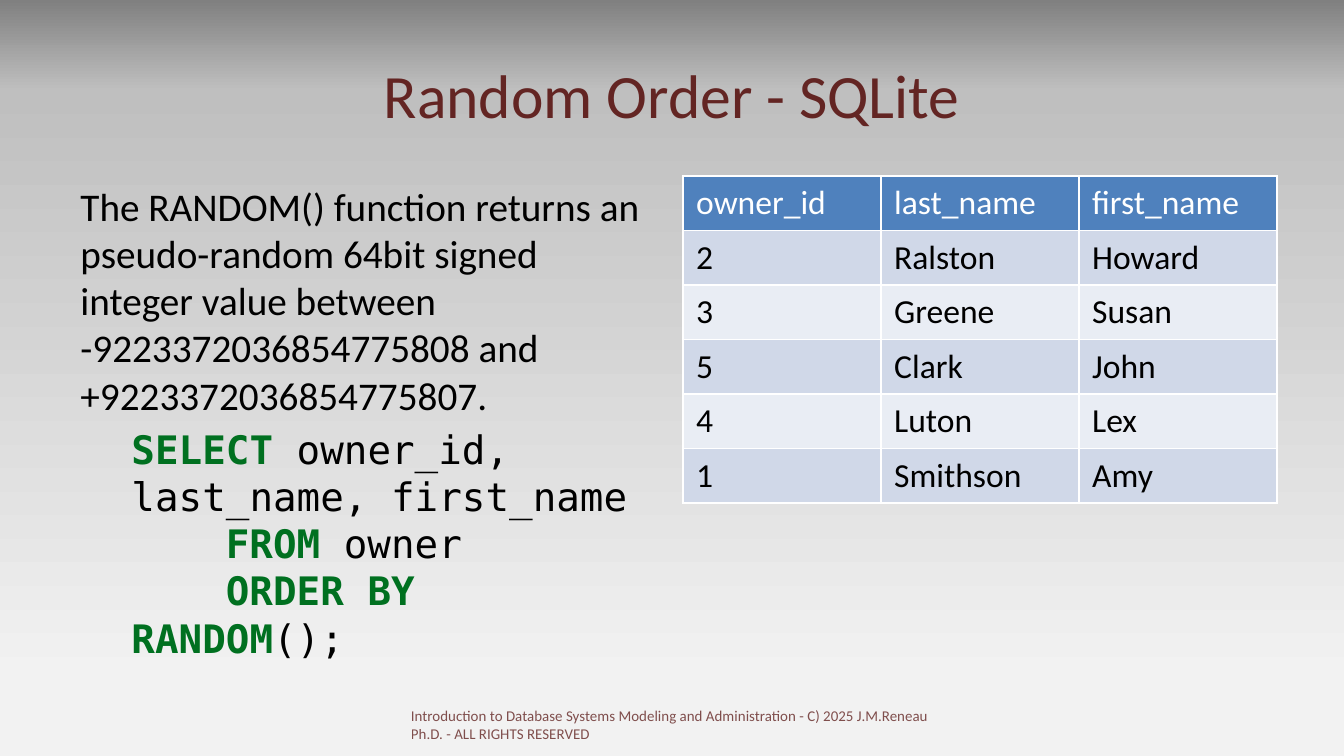
from copy import deepcopy
from pptx import Presentation
from pptx.dml.color import RGBColor
from pptx.enum import text
from pptx.oxml import parse_xml
from pptx.oxml.ns import nsdecls, qn
from pptx.util import Pt

SANS, MONO = "Calibri", "DejaVu Sans Mono"
MAROON, BLACK, WHITE, GREEN = "632523", "000000", "FFFFFF", "007020"
HEAD, BANDS = "4F81BD", ("D0D8E8", "E9EDF4")
STOPS = [(0, "808080"), (0.12, "BFBFBF"), (0.9, "F2F2F2")]
TITLE = "Random Order - SQLite"
INTRO = ("The RANDOM() function returns an pseudo-random 64bit signed integer "
         "value between -9223372036854775808 and +9223372036854775807.")
CODE = [
    ("SELECT", " owner_id, last_name, first_name"),
    ("FROM", " owner"),
    ("ORDER BY RANDOM", "();"),
]
ROWS = [
    ("owner_id", "last_name", "first_name"),
    ("2", "Ralston", "Howard"),
    ("3", "Greene", "Susan"),
    ("5", "Clark", "John"),
    ("4", "Luton", "Lex"),
    ("1", "Smithson", "Amy"),
]
FOOT = ("Introduction to Database Systems Modeling and Administration - "
        "C) 2025 J.M.Reneau Ph.D. - ALL RIGHTS RESERVED")
LEFT, TOP, WIDE, ROW = 36, 94.32, 318.24, 29.2
INDENT, TAB = 27.36, 50.57


def rgb(code):
    return RGBColor.from_string(code)


def style(font, name, size, color):
    font.name, font.size = name, Pt(size)
    font.color.rgb = rgb(color)


def box(x, y, w, h):
    frame = slide.shapes.add_textbox(Pt(x), Pt(y), Pt(w), Pt(h)).text_frame
    frame.word_wrap = True
    return frame


def border(cell, side, width):
    cell._tc.get_or_add_tcPr().append(parse_xml(
        f'<a:{side} {nsdecls("a")} w="{Pt(width)}"><a:solidFill>'
        f'<a:srgbClr val="{WHITE}"/></a:solidFill></a:{side}>'))


deck = Presentation()
deck.slide_width, deck.slide_height = Pt(720), Pt(405)
slide = deck.slides.add_slide(deck.slide_layouts[6])

fill = slide.background.fill
fill.gradient()
fill.gradient_angle = 270
last = fill.gradient_stops[1]._gs
last.addnext(deepcopy(last))
for stop, (pos, color) in zip(fill.gradient_stops, STOPS):
    stop.position, stop.color.rgb = pos, rgb(color)

frame = box(LEFT, 16.56, 648, 67.68)
frame.vertical_anchor = text.MSO_ANCHOR.MIDDLE
para = frame.paragraphs[0]
para.text, para.alignment = TITLE, text.PP_ALIGN.CENTER
style(para.font, SANS, 33, MAROON)

frame = box(LEFT, TOP, WIDE, 267.12)
para = frame.paragraphs[0]
para.text = INTRO
style(para.font, SANS, 21, BLACK)
para.space_before, para.line_spacing = Pt(4.2), Pt(25.2)
for i, (key, rest) in enumerate(CODE):
    para = frame.add_paragraph()
    para.space_before, para.line_spacing = Pt(0 if i else 4.2), Pt(25.2)
    prop = para._p.get_or_add_pPr()
    prop.set("marL", str(Pt(INDENT)))
    prop.set("indent", str(Pt(TAB if i else 0)))
    for part, color in ((key, GREEN), (rest, BLACK)):
        run = para.add_run()
        run.text = part
        style(run.font, MONO, 21, color)
        run.font.bold = color == GREEN

table = slide.shapes.add_table(len(ROWS), len(ROWS[0]), Pt(365.76), Pt(TOP),
                               Pt(WIDE), Pt(ROW * len(ROWS))).table
for r, row in enumerate(ROWS):
    for c, word in enumerate(row):
        cell = table.cell(r, c)
        for side in ("lnL", "lnR", "lnT", "lnB"):
            border(cell, side, 1)
        cell.fill.solid()
        cell.fill.fore_color.rgb = rgb(BANDS[(r - 1) % 2] if r else HEAD)
        cell.text = word
        style(cell.text_frame.paragraphs[0].font, SANS, 18,
              BLACK if r else WHITE)

para = box(213.12, 375.12, 292.32, 21.6).paragraphs[0]
para.text = FOOT
style(para.font, SANS, 8, MAROON)
for tint in para._p.iter(qn("a:srgbClr")):
    tint.append(parse_xml(f'<a:alpha {nsdecls("a")} val="80000"/>'))

deck.save("out.pptx")
